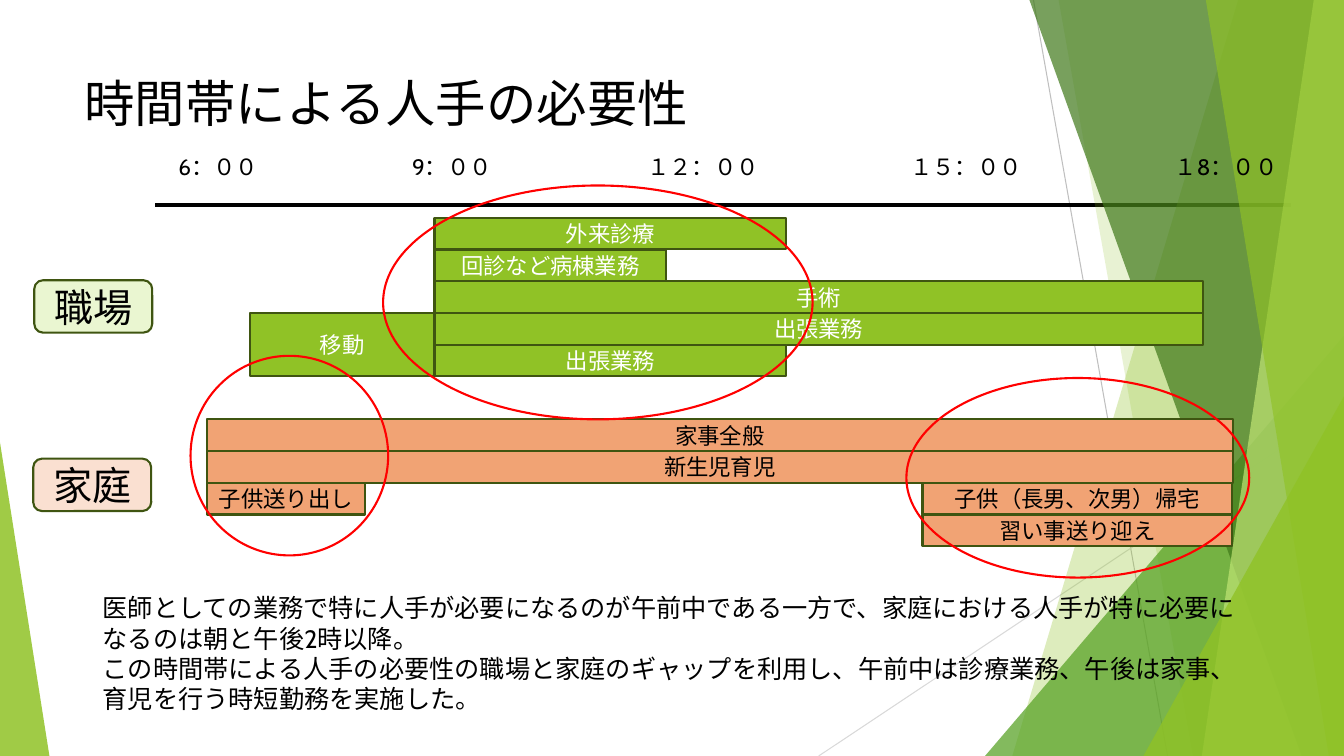
import pptx
import pptx.util
import pptx.dml.color
import pptx.enum.shapes
import pptx.enum.text
import pptx.oxml.ns
from lxml import etree

Inches = pptx.util.Inches
RGBColor = pptx.dml.color.RGBColor
MSO_SHAPE = pptx.enum.shapes.MSO_SHAPE
CENTER = pptx.enum.text.PP_ALIGN.CENTER
qn = pptx.oxml.ns.qn

BLACK = RGBColor(0x00, 0x00, 0x00)
WHITE = RGBColor(0xFF, 0xFF, 0xFF)
RED = RGBColor(0xFF, 0x00, 0x00)
GREEN = RGBColor(0x90, 0xC2, 0x26)
MID_GREEN = RGBColor(0x54, 0xA0, 0x21)
DARK_GREEN = RGBColor(0x3F, 0x78, 0x19)
LIME = RGBColor(0xC0, 0xE4, 0x74)
OUTLINE = RGBColor(0x3F, 0x55, 0x11)
ORANGE = RGBColor(0xF1, 0xA3, 0x74)
PALE_GREEN = RGBColor(0xEA, 0xF6, 0xD1)
PALE_ORANGE = RGBColor(0xFA, 0xE0, 0xD1)
GRAY = RGBColor(0xBF, 0xBF, 0xBF)
LIGHT_GRAY = RGBColor(0xD9, 0xD9, 0xD9)

WIDTH, HEIGHT = 13.33, 7.5
ROW = 0.315

deck = pptx.Presentation()
deck.slide_width, deck.slide_height = Inches(WIDTH), Inches(HEIGHT)
slide = deck.slides.add_slide(deck.slide_layouts[6])
shapes = slide.shapes


def paint(shape, fill=None, line=None, opacity=100):
    """Set fill, outline and opacity (percent); None means no fill or no outline."""
    shape.shadow.inherit = False
    if fill is None:
        shape.fill.background()
    else:
        shape.fill.solid()
        shape.fill.fore_color.rgb = fill
        if opacity < 100:
            color = shape._element.spPr.find(qn("a:solidFill"))[0]
            etree.SubElement(color, qn("a:alpha"), val=str(opacity * 1000))
    if line is None:
        shape.line.fill.background()
    else:
        shape.line.color.rgb = line
        shape.line.width = pptx.util.Pt(1.5)


def write(shape, paragraphs, size, color=BLACK, align=None):
    frame = shape.text_frame
    frame.word_wrap = True
    for index, text in enumerate(paragraphs):
        paragraph = frame.paragraphs[0] if index == 0 else frame.add_paragraph()
        paragraph.alignment = align
        run = paragraph.add_run()
        run.text = text
        run.font.name = "Cabin"
        run.font.size = pptx.util.Pt(size)
        run.font.color.rgb = color


# Lines: two thin background rays, then the time axis
for x1, y1, x2, y2, color, weight in [
    (10.25, 0, 11.58, HEIGHT, GRAY, 0.75),
    (WIDTH, 4.03, 8.12, HEIGHT, LIGHT_GRAY, 0.75),
    (1.54, 2.03, 12.8, 2.03, BLACK, 3),
]:
    ray = shapes.add_connector(pptx.enum.shapes.MSO_CONNECTOR.STRAIGHT,
                               Inches(x1), Inches(y1), Inches(x2), Inches(y2))
    ray.line.color.rgb = color
    ray.line.width = pptx.util.Pt(weight)
    etree.SubElement(ray._element.spPr, qn("a:effectLst"))

# Background facets; a band runs from its top edge and bottom edge to the right side
for facet in [
    ("band", 12.28, 10.04, GREEN, 30),
    ("band", 10.5, 11.83, GREEN, 20),
    ("triangle", 9.77, 3.33, 3.56, 1, MID_GREEN, 72),
    ("band", 10.21, 12.91, DARK_GREEN, 70),
    ("band", 13.03, 11.92, LIME, 70),
    ("band", 11.96, 13.18, GREEN, 65),
    ("triangle", 11.34, 3.93, 1.99, 1, GREEN, 80),
    ("triangle", 0, 4.39, 0.49, 0, GREEN, 85),
]:
    if facet[0] == "band":
        _, top_x, bottom_x, color, opacity = facet
        outline = shapes.build_freeform(Inches(top_x), 0)
        outline.add_line_segments([
            (Inches(WIDTH), 0),
            (Inches(WIDTH), Inches(HEIGHT)),
            (Inches(bottom_x), Inches(HEIGHT)),
        ], close=True)
        panel = outline.convert_to_shape()
    else:
        _, left, top, width, apex, color, opacity = facet
        panel = shapes.add_shape(MSO_SHAPE.ISOSCELES_TRIANGLE, Inches(left), Inches(top),
                                 Inches(width), Inches(HEIGHT - top))
        panel.adjustments[0] = apex
    paint(panel, color, opacity=opacity)

# Title, hour labels and conclusion
for left, top, width, height, size, paragraphs in [
    (0.74, 0.67, 9.4, 1.44, 36, ["時間帯による人手の必要性"]),
    (1.67, 1.47, 1.19, 0.37, 16, ["6：００"]),
    (3.99, 1.47, 1.19, 0.37, 16, ["9：００"]),
    (6.32, 1.47, 1.48, 0.37, 16, ["１２：００"]),
    (8.93, 1.47, 1.48, 0.37, 16, ["１５：００"]),
    (11.55, 1.47, 1.48, 0.37, 16, ["１8：００"]),
    (0.92, 5.83, 11.5, 1.31, 18, [
        "医師としての業務で特に人手が必要になるのが午前中である一方で、"
        "家庭における人手が特に必要になるのは朝と午後2時以降。",
        "この時間帯による人手の必要性の職場と家庭のギャップを利用し、"
        "午前中は診療業務、午後は家事、育児を行う時短勤務を実施した。",
    ]),
]:
    box = shapes.add_textbox(Inches(left), Inches(top), Inches(width), Inches(height))
    write(box, paragraphs, size)

# Schedule bars: left, width, first row, rows spanned, task
work_bars = [
    (4.31, 3.49, 0, 1, "外来診療"),
    (4.31, 2.3, 1, 1, "回診など病棟業務"),
    (4.31, 7.62, 2, 1, "手術"),
    (4.31, 7.62, 3, 1, "出張業務"),
    (4.31, 3.49, 4, 1, "出張業務"),
    (2.48, 1.83, 3, 2, "移動"),
]
home_bars = [
    (2.05, 10.18, 0, 1, "家事全般"),
    (2.05, 10.18, 1, 1, "新生児育児"),
    (2.05, 1.57, 2, 1, "子供送り出し"),
    (9.15, 3.07, 2, 1, "子供（長男、次男）帰宅"),
    (9.15, 3.07, 3, 1, "習い事送り迎え"),
]
for bars, first_top, fill, ink in [
    (work_bars, 2.16, GREEN, WHITE),
    (home_bars, 4.16, ORANGE, BLACK),
]:
    for left, width, row, span, task in bars:
        bar = shapes.add_shape(MSO_SHAPE.RECTANGLE, Inches(left), Inches(first_top + row * ROW),
                               Inches(width), Inches(span * ROW))
        paint(bar, fill, OUTLINE)
        write(bar, [task], 16, ink, CENTER)

# Rings around the busiest hours
for left, top, width, height in [
    (3.8, 1.84, 4.26, 2.32),
    (8.99, 3.75, 3.4, 1.98),
    (1.89, 3.53, 1.96, 1.98),
]:
    ring = shapes.add_shape(MSO_SHAPE.OVAL, Inches(left), Inches(top),
                            Inches(width), Inches(height))
    paint(ring, line=RED)

for left, top, fill, place in [
    (0.34, 2.78, PALE_GREEN, "職場"),
    (0.33, 4.55, PALE_ORANGE, "家庭"),
]:
    tag = shapes.add_shape(MSO_SHAPE.ROUNDED_RECTANGLE, Inches(left), Inches(top),
                           Inches(1.17), Inches(0.52))
    paint(tag, fill, OUTLINE)
    write(tag, [place], 28, align=CENTER)

deck.save("out.pptx")
